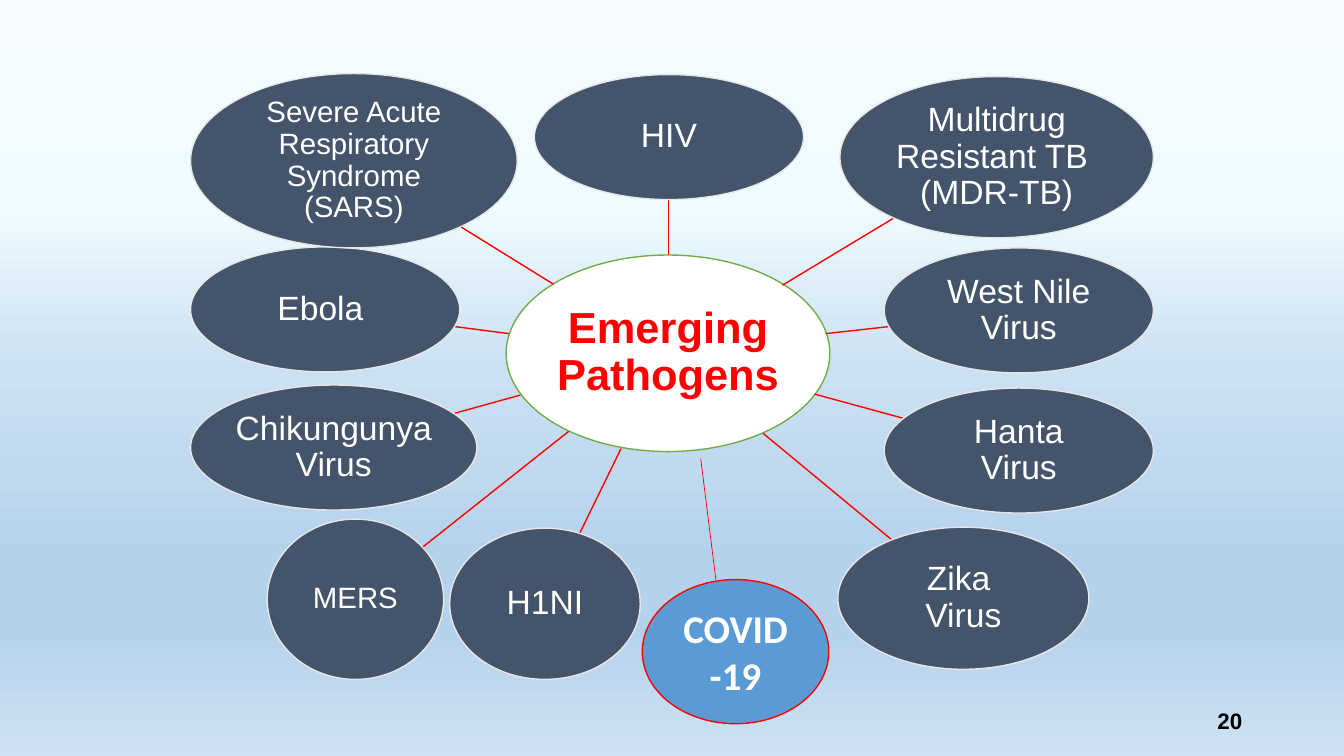
from dataclasses import dataclass

from lxml import etree
from pptx import Presentation
from pptx.dml.color import RGBColor
from pptx.enum.shapes import MSO_CONNECTOR, MSO_SHAPE
from pptx.enum.text import MSO_ANCHOR, PP_ALIGN
from pptx.oxml.ns import qn
from pptx.util import Inches, Pt

OVAL = MSO_SHAPE.OVAL
STRAIGHT = MSO_CONNECTOR.STRAIGHT
MIDDLE = MSO_ANCHOR.MIDDLE
CENTER, RIGHT = PP_ALIGN.CENTER, PP_ALIGN.RIGHT


@dataclass(frozen=True)
class Theme:
    red: str = "FF0000"
    green: str = "70AD47"
    slate: str = "44546A"
    blue: str = "5B9BD5"
    pale: str = "E7E6E6"
    white: str = "FFFFFF"
    black: str = "000000"
    sky: tuple = ((0, "F7FAFD"), (27, "EFFCFF"), (49, "CBE0F2"),
                  (74, "B5D2EC"), (83, "B5D2EC"), (100, "CEE1F2"))
    font: str = "Arial"
    alt: str = "Calibri"
    hub: int = 31
    covid: int = 28
    body: int = 24
    small: int = 21
    page: int = 16


def write(frame, text, size, color, font, bold=False, align=CENTER,
          inset=None, spacing=None):
    """Fill a text frame with one formatted paragraph."""
    frame.word_wrap = True
    frame.vertical_anchor = MIDDLE
    if inset is not None:
        frame.margin_left = frame.margin_right = Inches(inset)
        frame.margin_top = frame.margin_bottom = Inches(inset)
    para = frame.paragraphs[0]
    para.text = text
    para.alignment = align
    if spacing:
        para.line_spacing = spacing
    for run in para.runs:
        run.font.size = Pt(size)
        run.font.name = font
        run.font.bold = bold
        run.font.color.rgb = RGBColor.from_string(color)


class Board:
    def __init__(self, slide, theme):
        self.slide = slide
        self.theme = theme

    def backdrop(self):
        fill = self.slide.background.fill
        fill.gradient()
        fill.gradient_angle = 270
        stops = self.slide.element.find(".//" + qn("a:gsLst"))
        stops.clear()
        for place, color in self.theme.sky:
            stop = etree.SubElement(stops, qn("a:gs"), pos=str(place * 1000))
            etree.SubElement(stop, qn("a:srgbClr"), val=color)

    def line(self, start, end, width=1):
        ends = [Inches(v) for v in (*start, *end)]
        link = self.slide.shapes.add_connector(STRAIGHT, *ends)
        link.line.color.rgb = RGBColor.from_string(self.theme.red)
        link.line.width = Pt(width)
        etree.SubElement(link.element.spPr, qn("a:effectLst"))

    def oval(self, box, text, fill, edge, **style):
        shape = self.slide.shapes.add_shape(OVAL, *map(Inches, box))
        shape.shadow.inherit = False
        shape.fill.solid()
        shape.fill.fore_color.rgb = RGBColor.from_string(fill)
        shape.line.color.rgb = RGBColor.from_string(edge)
        shape.line.width = Pt(1)
        write(shape.text_frame, text, **style)

    def label(self, box, text, **style):
        shape = self.slide.shapes.add_textbox(*map(Inches, box))
        write(shape.text_frame, text, **style)


def main():
    deck = Presentation()
    deck.slide_width, deck.slide_height = Inches(13.33), Inches(7.5)
    theme = Theme()
    board = Board(deck.slides.add_slide(deck.slide_layouts[6]), theme)
    board.backdrop()

    # Page number
    board.label((9.42, 6.95, 3, 0.4), "20", size=theme.page,
                color=theme.black, font=theme.font, bold=True, align=RIGHT)

    # Hub
    board.oval((5.02, 2.53, 3.21, 1.95), "Emerging Pathogens", theme.white,
               theme.green, size=theme.hub, color=theme.red, font=theme.font,
               bold=True, inset=0.02, spacing=0.9)

    # Pathogens: text, size, oval box, spoke start and end
    body, small = theme.body, theme.small
    nodes = [
        ("HIV", body, (5.3, 0.74, 2.67, 1.24), (6.63, 2.53), (6.63, 1.98)),
        ("Multidrug Resistant TB \n(MDR-TB)", body, (8.33, 0.76, 3.11, 1.6),
         (7.76, 2.83), (8.87, 2.16)),
        ("West Nile Virus", body, (8.77, 2.46, 2.67, 1.24),
         (8.19, 3.31), (8.82, 3.24)),
        ("Hanta\nVirus", body, (8.77, 3.85, 2.67, 1.24),
         (8.08, 3.91), (8.96, 4.15)),
        ("Zika \nVirus", body, (8.31, 5.23, 2.49, 1.41),
         (7.57, 4.3), (8.85, 5.36)),
        ("H1NI", body, (4.46, 5.24, 1.89, 1.5), (6.16, 4.45), (5.75, 5.29)),
        ("MERS", small, (2.65, 5.15, 1.75, 1.59), (5.64, 4.28), (4.19, 5.43)),
        ("Chikungunya Virus", body, (1.89, 3.82, 2.84, 1.24),
         (5.16, 3.92), (4.51, 4.1)),
        ("Ebola ", body, (1.89, 2.45, 2.67, 1.24), (5.05, 3.31), (4.51, 3.24)),
        ("Severe Acute Respiratory Syndrome (SARS)", small,
         (1.89, 0.73, 3.24, 1.73), (5.49, 2.82), (4.57, 2.25)),
    ]
    for text, size, box, start, end in nodes:
        board.line(start, end)
        board.oval(box, text, theme.slate, theme.pale, size=size,
                   color=theme.white, font=theme.font, inset=0.02,
                   spacing=0.9)

    # Newest pathogen
    board.line((6.95, 4.55), (7.1, 5.75), width=0.5)
    board.oval((6.37, 5.75, 1.85, 1.43), "COVID-19", theme.blue, theme.red,
               size=theme.covid, color=theme.white, font=theme.alt, bold=True)

    deck.save("out.pptx")


if __name__ == "__main__":
    main()
